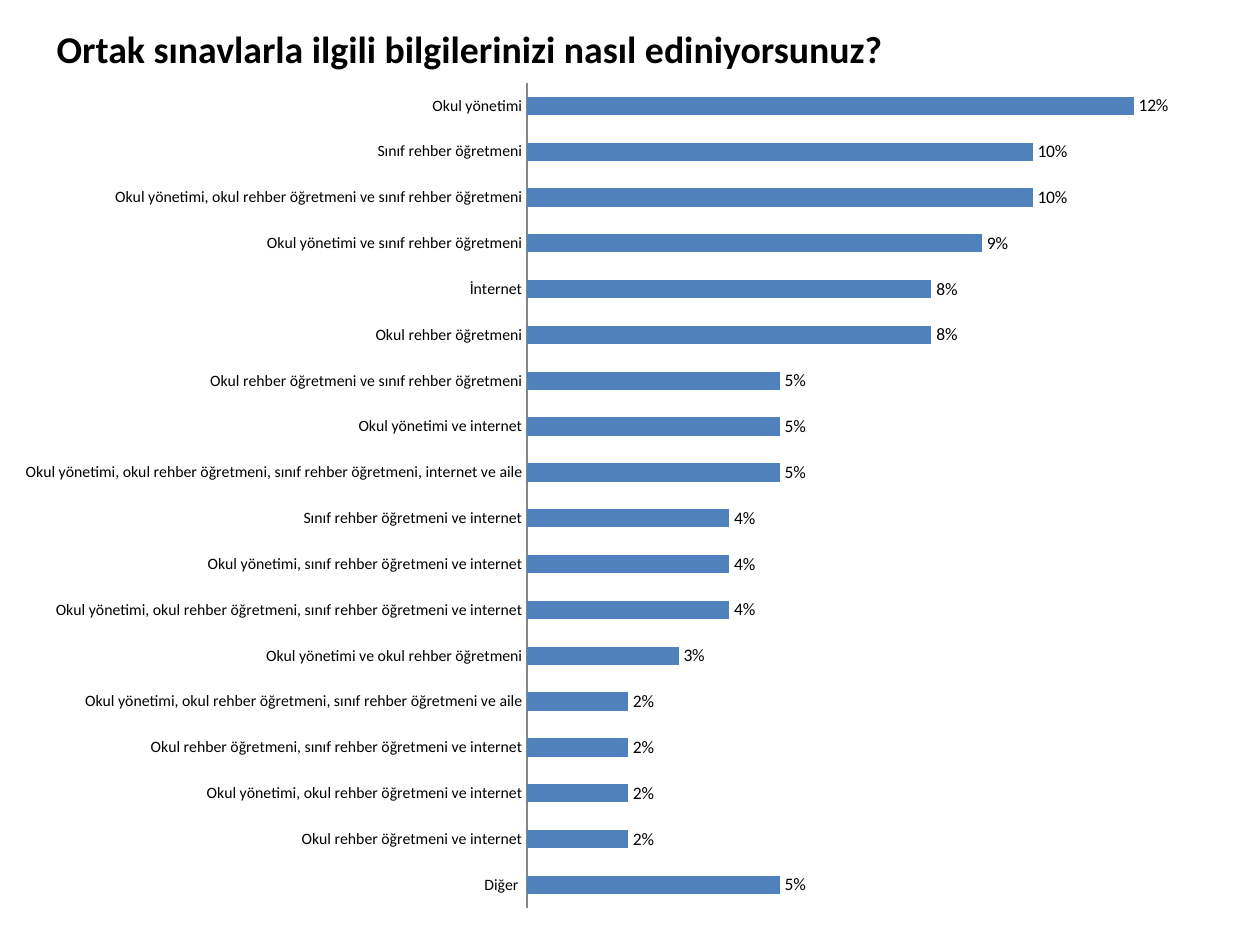
from dataclasses import dataclass

from lxml import etree
from pptx import Presentation
from pptx import util as u
from pptx.chart import data as cd
from pptx.dml import color as co
from pptx.enum import chart as ch
from pptx.enum import text as tx
from pptx.oxml import ns


@dataclass(frozen=True)
class Theme:
    face: str = "Calibri"
    ink: str = "000000"
    bar: str = "4F81BD"
    axis: str = "868686"
    head: float = 21.6
    label: float = 10
    tick: float = 9


THEME = Theme()
SCALE = 914400 // 126
ROWS = [
    ("Okul yönetimi", 12),
    ("Sınıf rehber öğretmeni", 10),
    ("Okul yönetimi, okul rehber öğretmeni ve sınıf rehber öğretmeni", 10),
    ("Okul yönetimi ve sınıf rehber öğretmeni", 9),
    ("İnternet", 8),
    ("Okul rehber öğretmeni", 8),
    ("Okul rehber öğretmeni ve sınıf rehber öğretmeni", 5),
    ("Okul yönetimi ve internet", 5),
    ("Okul yönetimi, okul rehber öğretmeni, sınıf rehber öğretmeni, internet ve aile", 5),
    ("Sınıf rehber öğretmeni ve internet", 4),
    ("Okul yönetimi, sınıf rehber öğretmeni ve internet", 4),
    ("Okul yönetimi, okul rehber öğretmeni, sınıf rehber öğretmeni ve internet", 4),
    ("Okul yönetimi ve okul rehber öğretmeni", 3),
    ("Okul yönetimi, okul rehber öğretmeni, sınıf rehber öğretmeni ve aile", 2),
    ("Okul rehber öğretmeni, sınıf rehber öğretmeni ve internet", 2),
    ("Okul yönetimi, okul rehber öğretmeni ve internet", 2),
    ("Okul rehber öğretmeni ve internet", 2),
    ("Diğer ", 5),
]


def px(n):
    return u.Emu(n * SCALE)


def rgb(code):
    return co.RGBColor.from_string(code)


def style(font, size, bold=False, color=THEME.ink):
    font.name = THEME.face
    font.size = u.Pt(size)
    font.bold = bold
    font.color.rgb = rgb(color)


def write(frame, words, size, bold=False, align=tx.PP_ALIGN.LEFT):
    frame.word_wrap = True
    frame.auto_size = tx.MSO_AUTO_SIZE.NONE
    frame.vertical_anchor = tx.MSO_ANCHOR.TOP
    frame.margin_top = 0
    line = frame.paragraphs[0]
    line.alignment = align
    run = line.add_run()
    run.text = words
    style(run.font, size, bold)


def header(slide, box):
    title = slide.shapes.title
    title.left, title.top, title.width, title.height = map(px, box)
    write(title.text_frame, "Ortak sınavlarla ilgili bilgilerinizi nasıl ediniyorsunuz?",
          THEME.head, bold=True)


def layout(chart, box, plot):
    area = chart.element.find(".//" + ns.qn("c:plotArea"))
    old = area.find(ns.qn("c:layout"))
    if old is not None:
        area.remove(old)
    node = etree.Element(ns.qn("c:layout"))
    area.insert(0, node)
    manual = etree.SubElement(node, ns.qn("c:manualLayout"))
    left, top, width, height = plot
    parts = [("layoutTarget", "inner"), ("xMode", "edge"), ("yMode", "edge"),
             ("x", left / box[2]), ("y", top / box[3]),
             ("w", width / box[2]), ("h", height / box[3])]
    for name, value in parts:
        etree.SubElement(manual, ns.qn("c:" + name)).set("val", str(value))


def bars(slide, box):
    data = cd.CategoryChartData(number_format="0%")
    rows = ROWS[::-1]
    data.categories = [name for name, _ in rows]
    data.add_series("Series 1", [share / 100 for _, share in rows])
    chart = slide.shapes.add_chart(
        ch.XL_CHART_TYPE.BAR_CLUSTERED, *map(px, box), data).chart
    chart.has_title = False
    chart.has_legend = False
    style(chart.font, THEME.label)

    names = chart.category_axis
    names.major_tick_mark = ch.XL_TICK_MARK.NONE
    names.format.line.color.rgb = rgb(THEME.axis)
    style(names.tick_labels.font, THEME.tick)

    scale = chart.value_axis
    scale.minimum_scale, scale.maximum_scale = 0, 0.14
    scale.has_major_gridlines = False
    scale.tick_labels.number_format = "0%"
    scale.tick_labels.number_format_is_linked = False
    scale.visible = False

    plot = chart.plots[0]
    plot.gap_width, plot.overlap = 150, -25
    plot.vary_by_categories = False
    fill = plot.series[0].format.fill
    fill.solid()
    fill.fore_color.rgb = rgb(THEME.bar)
    plot.has_data_labels = True
    labels = plot.data_labels
    labels.show_value = True
    labels.number_format = "0%"
    labels.number_format_is_linked = False
    labels.position = ch.XL_LABEL_POSITION.OUTSIDE_END
    style(labels.font, THEME.label)
    layout(chart, box, (527, 17, 708, 825))


def main():
    deck = Presentation()
    deck.slide_width, deck.slide_height = u.Inches(10), u.Inches(7.5)
    slide = deck.slides.add_slide(deck.slide_layouts[5])
    header(slide, (44, 26, 1134, 87))
    bars(slide, (0, 66, 1260, 859))
    deck.save("out.pptx")


if __name__ == "__main__":
    main()
